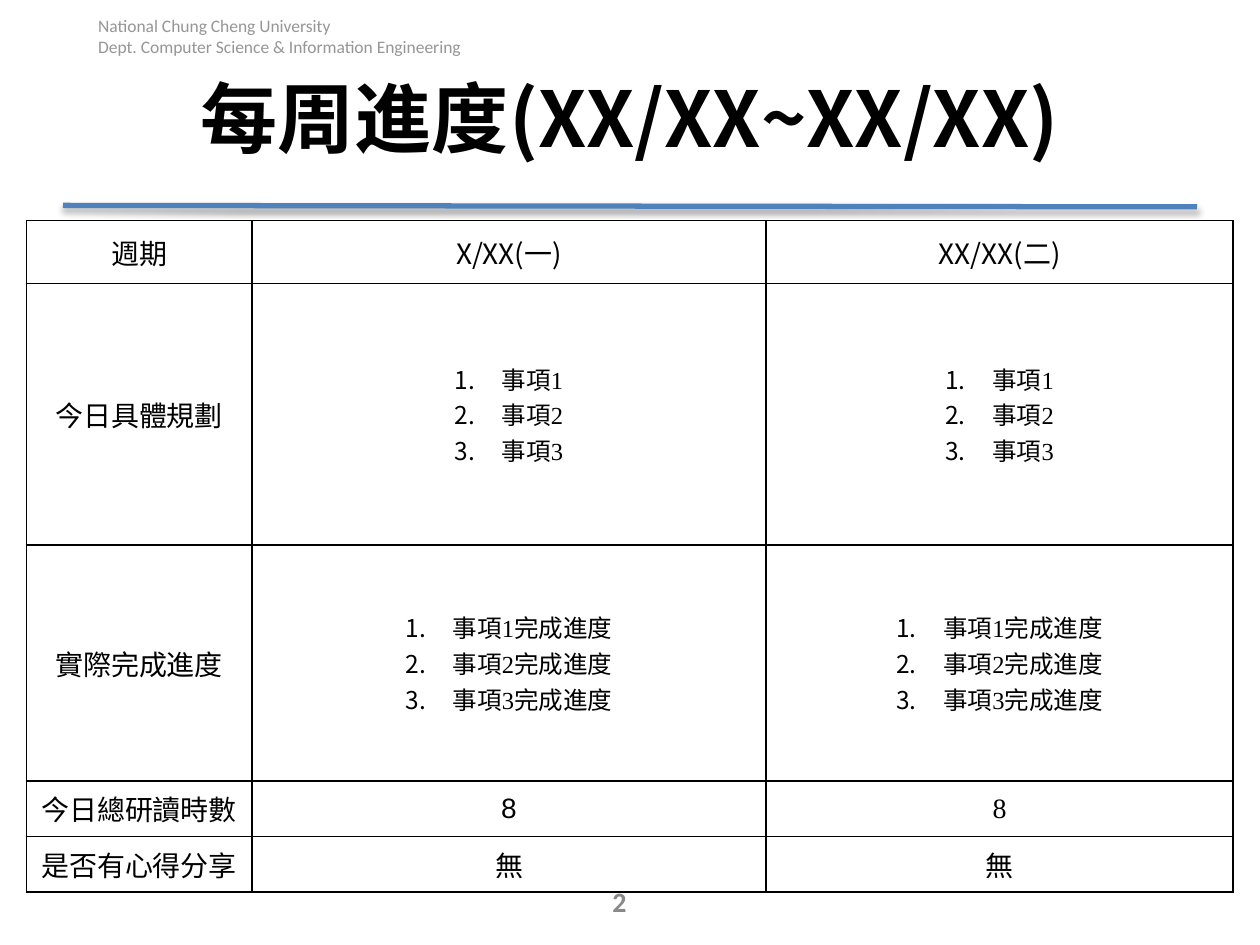
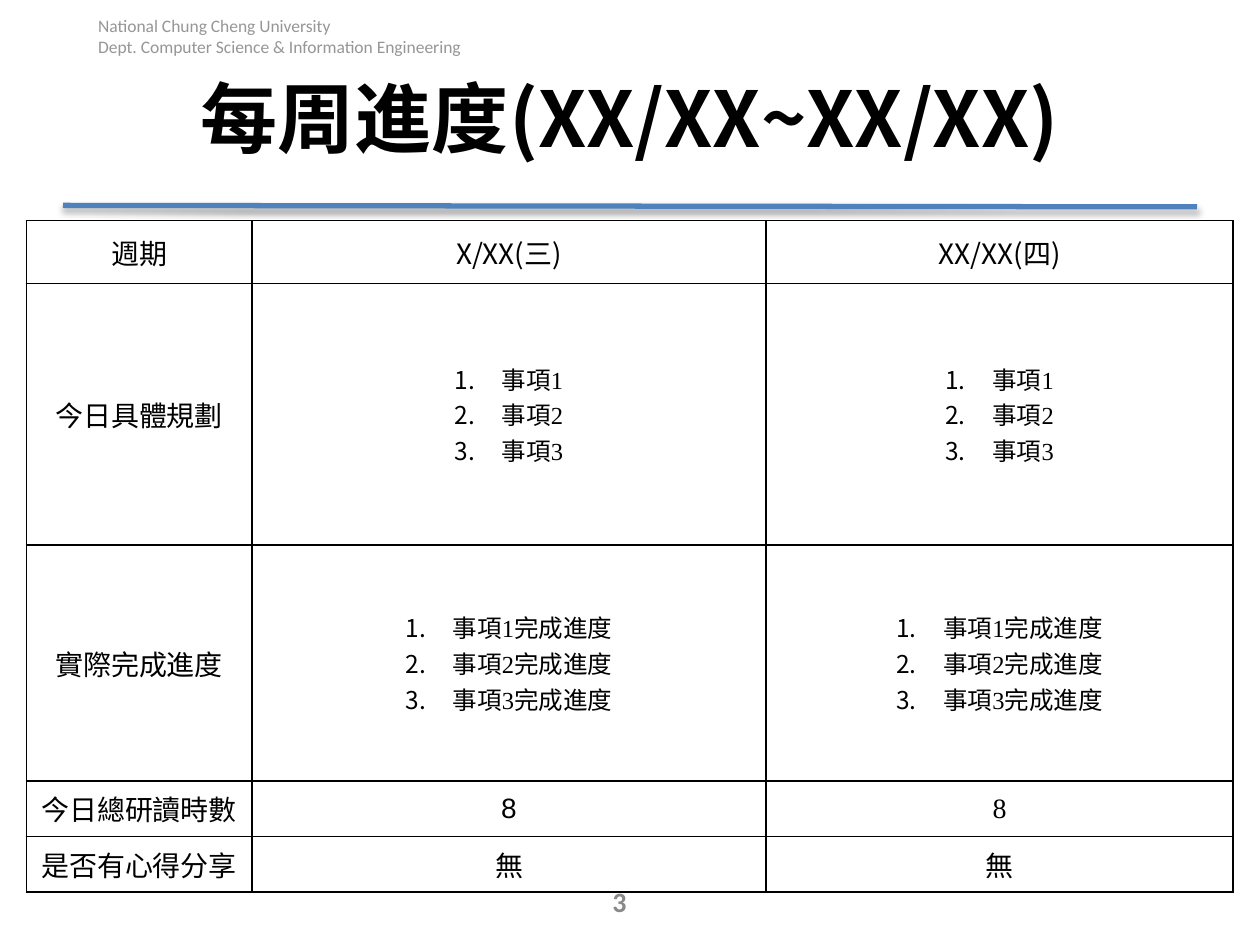
from lxml.etree import SubElement
from pptx import Presentation
from pptx.dml.color import RGBColor
from pptx.enum.shapes import MSO_CONNECTOR
from pptx.enum.text import MSO_ANCHOR, MSO_AUTO_SIZE, PP_ALIGN
from pptx.oxml import parse_xml
from pptx.oxml.ns import nsdecls, qn
from pptx.util import Cm, Pt

BLACK = RGBColor(0x00, 0x00, 0x00)
RULE_BLUE = RGBColor(0x4F, 0x81, 0xBD)
HEADER_GRAY = RGBColor(0x96, 0x96, 0x96)
NUMBER_GRAY = RGBColor(0x89, 0x89, 0x89)
SANS_SC = "Noto Sans CJK SC"
SANS_TC = "Noto Sans CJK TC"
TIMES = "Times New Roman"

TITLE = "每周進度(XX/XX~XX/XX)"
HEADER = "National Chung Cheng University\nDept. Computer Science & Information Engineering"
TITLE_FORMAT = {"name": SANS_TC, "size": Pt(44), "bold": True}
HEADER_FORMAT = {"name": "Calibri", "size": Pt(10)}
NUMBER_FORMAT = {"name": "Calibri", "size": Pt(16), "bold": True}
LIST_FORMAT = {"name": TIMES, "size": Pt(14)}

COLUMN_WIDTHS = [Cm(4.55), Cm(10.36), Cm(9.42)]
ROW_HEIGHTS = [Cm(1.26), Cm(5.28), Cm(4.75), Cm(1.12), Cm(1.12)]
LIST_INDENT = Cm(0.95)
LIST_ROWS = (1, 2)
PLANS = "\n".join(f"事項{item}" for item in (1, 2, 3))
RESULTS = "\n".join(f"事項{item}完成進度" for item in (1, 2, 3))

FIRST_PAGE = 2
DAY_PAIRS = [("X/XX(一)", "XX/XX(二)"), ("X/XX(三)", "XX/XX(四)")]

RULE_SHADOW = (
    f'<a:effectLst {nsdecls("a")}>'
    '<a:outerShdw blurRad="39400" dist="22900" dir="5400000" rotWithShape="0">'
    '<a:srgbClr val="000000"><a:alpha val="35000"/></a:srgbClr>'
    "</a:outerShdw></a:effectLst>"
)


def write_text(text_frame, text, font_format, color, alignment=PP_ALIGN.CENTER):
    text_frame.text = text
    for paragraph in text_frame.paragraphs:
        paragraph.alignment = alignment
        for run in paragraph.runs:
            for attribute, value in font_format.items():
                setattr(run.font, attribute, value)
            run.font.color.rgb = color
            east_asian = SANS_TC if font_format["name"] == SANS_TC else SANS_SC
            SubElement(run.font._element, qn("a:ea"), typeface=east_asian)


def add_cell_borders(cell):
    properties = cell._tc.get_or_add_tcPr()
    for side in ("lnL", "lnR", "lnT", "lnB"):
        border = SubElement(properties, qn(f"a:{side}"), w=str(Pt(1)))
        fill = SubElement(border, qn("a:solidFill"))
        SubElement(fill, qn("a:srgbClr"), val=str(BLACK))


presentation = Presentation()
presentation.slide_width = Cm(25.4)
presentation.slide_height = Cm(19.05)
title_only = presentation.slide_layouts[5]

for page, (first_day, second_day) in enumerate(DAY_PAIRS, FIRST_PAGE):
    slide = presentation.slides.add_slide(title_only)

    # Header, rule and title
    header = slide.shapes.add_textbox(Cm(1.73), Cm(0.18), Cm(8.64), Cm(1.09))
    header.text_frame.word_wrap = True
    write_text(header.text_frame, HEADER, HEADER_FORMAT, HEADER_GRAY, PP_ALIGN.LEFT)

    rule = slide.shapes.add_connector(
        MSO_CONNECTOR.STRAIGHT, Cm(1.27), Cm(4.14), Cm(24.13), Cm(4.17))
    rule.line.color.rgb = RULE_BLUE
    rule.line.width = Pt(3)
    rule._element.spPr.append(parse_xml(RULE_SHADOW))

    title = slide.shapes.title
    title.left, title.top, title.width, title.height = Cm(1.27), Cm(0.76), Cm(22.86), Cm(3.18)
    title.text_frame.auto_size = MSO_AUTO_SIZE.NONE
    title.text_frame.vertical_anchor = MSO_ANCHOR.MIDDLE
    write_text(title.text_frame, TITLE, TITLE_FORMAT, BLACK)

    # Progress table: the label column, then one column per day
    rows = [
        ("週期", first_day, second_day),
        ("今日具體規劃", PLANS, PLANS),
        ("實際完成進度", RESULTS, RESULTS),
        ("今日總研讀時數", "8", "8"),
        ("是否有心得分享", "無", "無"),
    ]
    table = slide.shapes.add_table(
        len(rows), len(COLUMN_WIDTHS), Cm(0.53), Cm(4.45),
        sum(COLUMN_WIDTHS), sum(ROW_HEIGHTS)).table
    table.first_row = table.horz_banding = False
    for column, width in zip(table.columns, COLUMN_WIDTHS):
        column.width = width
    for row, height in zip(table.rows, ROW_HEIGHTS):
        row.height = height

    for row_index, texts in enumerate(rows):
        for column_index, text in enumerate(texts):
            cell = table.cell(row_index, column_index)
            cell.vertical_anchor = MSO_ANCHOR.MIDDLE
            add_cell_borders(cell)
            cell.fill.background()

            if row_index in LIST_ROWS and column_index > 0:
                write_text(cell.text_frame, text, LIST_FORMAT, BLACK)
                for paragraph in cell.text_frame.paragraphs:
                    properties = paragraph._p.get_or_add_pPr()
                    properties.set("marL", str(LIST_INDENT))
                    properties.set("indent", str(-LIST_INDENT))
                    SubElement(properties, qn("a:buFont"), typeface=SANS_SC)
                    SubElement(properties, qn("a:buAutoNum"), type="arabicPeriod")
                continue

            if row_index == 0:
                font_name = SANS_SC
            elif column_index == 1:
                font_name = "Arial"
            else:
                font_name = TIMES
            write_text(cell.text_frame, text, {"name": font_name, "size": Pt(16)}, BLACK)

    # Page number
    number = slide.shapes.add_textbox(Cm(9.53), Cm(17.65), Cm(5.92), Cm(1.02))
    number.text_frame.word_wrap = True
    number.text_frame.vertical_anchor = MSO_ANCHOR.MIDDLE
    write_text(number.text_frame, str(page), NUMBER_FORMAT, NUMBER_GRAY)

presentation.save("out.pptx")
